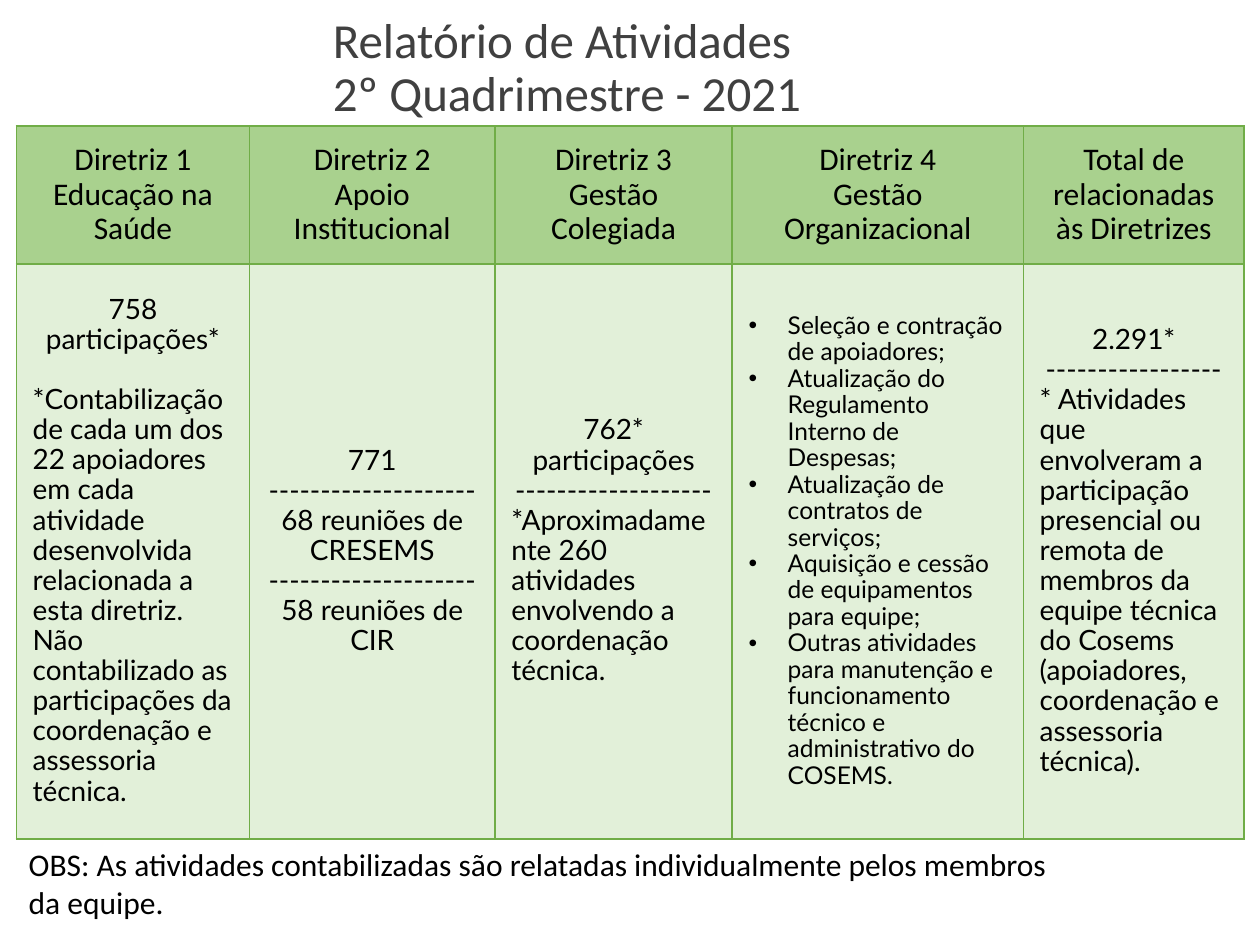
import dataclasses

import lxml.etree
import pptx
import pptx.dml.color
import pptx.enum.text
import pptx.oxml.ns
import pptx.util

Cm = pptx.util.Cm
Pt = pptx.util.Pt
ALIGN = pptx.enum.text.PP_ALIGN
ANCHOR = pptx.enum.text.MSO_ANCHOR


@dataclasses.dataclass(frozen=True)
class Theme:
    heading_font: str = "Calibri"
    body_font: str = "Lato"
    title_color: str = "404040"
    text_color: str = "000000"
    header_fill: str = "A9D18E"
    body_fill: str = "E2F0D9"
    border: str = "70AD47"
    title_size: int = 28
    header_size: int = 18
    body_size: int = 16
    list_size: int = 14


THEME = Theme()
INSET = Cm(0.33)
HANGING = Cm(0.79)
COLUMN_WIDTHS = [4.7, 4.95, 4.78, 5.87, 4.45]
ROW_HEIGHTS = [2.78, 11.59]

HEADERS = [
    ["Diretriz 1", "Educação na Saúde"],
    ["Diretriz 2", "Apoio Institucional"],
    ["Diretriz 3", "Gestão Colegiada"],
    ["Diretriz 4", "Gestão Organizacional"],
    ["Total de relacionadas às Diretrizes"],
]
CENTERED = dict(align=ALIGN.CENTER)
NOTE = dict(align=ALIGN.LEFT)
BULLET = dict(size=THEME.list_size, bullet="•")
BODY = [
    [
        ("758 participações*", CENTERED),
        ("*Contabilização de cada um dos 22 apoiadores em cada atividade "
         "desenvolvida relacionada a esta diretriz. Não contabilizado as "
         "participações da coordenação e assessoria técnica.",
         dict(NOTE, before=17)),
    ],
    [
        ("771", CENTERED),
        ("-" * 20, CENTERED),
        ("68 reuniões de CRESEMS", CENTERED),
        ("-" * 20, CENTERED),
        ("58 reuniões de CIR", CENTERED),
    ],
    [
        ("762*", CENTERED),
        ("participações", CENTERED),
        ("-" * 19, CENTERED),
        ("*Aproximadamente 260 atividades envolvendo a coordenação técnica.", NOTE),
    ],
    [
        ("Seleção e contração de apoiadores;", BULLET),
        ("Atualização do Regulamento Interno de Despesas;", BULLET),
        ("Atualização de contratos de serviços;", BULLET),
        ("Aquisição e cessão de equipamentos para equipe;", BULLET),
        ("Outras atividades para manutenção e funcionamento técnico e "
         "administrativo do COSEMS.", BULLET),
    ],
    [
        ("2.291*", CENTERED),
        ("-" * 17, CENTERED),
        ("* Atividades que envolveram a participação presencial ou remota de "
         "membros da equipe técnica do Cosems (apoiadores, coordenação e "
         "assessoria técnica).", NOTE),
    ],
]


def rgb(color):
    return pptx.dml.color.RGBColor.from_string(color)


def add_element(parent, tag, **attributes):
    return lxml.etree.SubElement(parent, pptx.oxml.ns.qn(tag), attributes)


def write_text(frame, text, *, first=False, size=THEME.body_size,
               font=THEME.body_font, color=THEME.text_color,
               align=ALIGN.LEFT, spacing=0.9, before=0, bullet=None):
    para = frame.paragraphs[0] if first else frame.add_paragraph()
    para.alignment = align
    para.line_spacing = spacing
    para.space_before = Pt(before)
    para.space_after = Pt(0)
    if bullet:
        properties = para._p.get_or_add_pPr()
        properties.set("marL", str(HANGING))
        properties.set("indent", str(-HANGING))
        bullet_color = add_element(properties, "a:buClr")
        add_element(bullet_color, "a:srgbClr", val=color)
        add_element(properties, "a:buFont", typeface="Arial")
        add_element(properties, "a:buChar", char=bullet)
    span = para.add_run()
    span.text = text
    span.font.size = Pt(size)
    span.font.name = font
    span.font.color.rgb = rgb(color)


def set_insets(target):
    target.margin_left = target.margin_right = INSET
    target.margin_top = target.margin_bottom = INSET


def style_cell(cell, fill):
    set_insets(cell)
    cell.vertical_anchor = ANCHOR.MIDDLE
    properties = cell._tc.get_or_add_tcPr()
    for side in ("a:lnL", "a:lnR", "a:lnT", "a:lnB"):
        line = add_element(properties, side, w=str(Pt(1)))
        add_element(add_element(line, "a:solidFill"), "a:srgbClr", val=THEME.border)
    cell.fill.solid()
    cell.fill.fore_color.rgb = rgb(fill)


def place_title(page, left, top, width, height):
    title = page.shapes.title
    title.left, title.top, title.width, title.height = left, top, width, height
    frame = title.text_frame
    frame.word_wrap = True
    frame.auto_size = pptx.enum.text.MSO_AUTO_SIZE.NONE
    frame.vertical_anchor = ANCHOR.TOP
    set_insets(frame)
    for index, text in enumerate(["Relatório de Atividades", "2º Quadrimestre - 2021"]):
        write_text(frame, text, first=index == 0, size=THEME.title_size,
                   font=THEME.heading_font, color=THEME.title_color)


def place_table(page, left, top, width, height):
    table = page.shapes.add_table(2, len(HEADERS), left, top, width, height).table
    table.first_row = table.horz_banding = False
    for row, share in zip(table.rows, ROW_HEIGHTS):
        row.height = int(height * share / sum(ROW_HEIGHTS))
    for index, share in enumerate(COLUMN_WIDTHS):
        table.columns[index].width = int(width * share / sum(COLUMN_WIDTHS))
        header, body = table.cell(0, index), table.cell(1, index)
        style_cell(header, THEME.header_fill)
        style_cell(body, THEME.body_fill)
        for order, text in enumerate(HEADERS[index]):
            write_text(header.text_frame, text, first=order == 0,
                       size=THEME.header_size, font=THEME.heading_font,
                       align=ALIGN.CENTER)
        for order, (text, style) in enumerate(BODY[index]):
            write_text(body.text_frame, text, first=order == 0, **style)


def place_remark(page, left, top, width, height):
    frame = page.shapes.add_textbox(left, top, width, height).text_frame
    frame.word_wrap = True
    write_text(frame, "OBS: As atividades contabilizadas são relatadas "
               "individualmente pelos membros da equipe.", first=True,
               size=THEME.header_size, font=THEME.heading_font, spacing=1.0)


def main():
    deck = pptx.Presentation()
    deck.slide_width, deck.slide_height = Cm(25.4), Cm(19.05)
    page = deck.slides.add_slide(deck.slide_layouts[5])
    place_title(page, Cm(6.38), Cm(0), Cm(18.69), Cm(2.21))
    place_table(page, Cm(0.33), Cm(2.54), Cm(sum(COLUMN_WIDTHS)), Cm(sum(ROW_HEIGHTS)))
    place_remark(page, Cm(0.33), Cm(16.92), Cm(21.29), Cm(1.8))
    deck.save("out.pptx")


if __name__ == "__main__":
    main()
